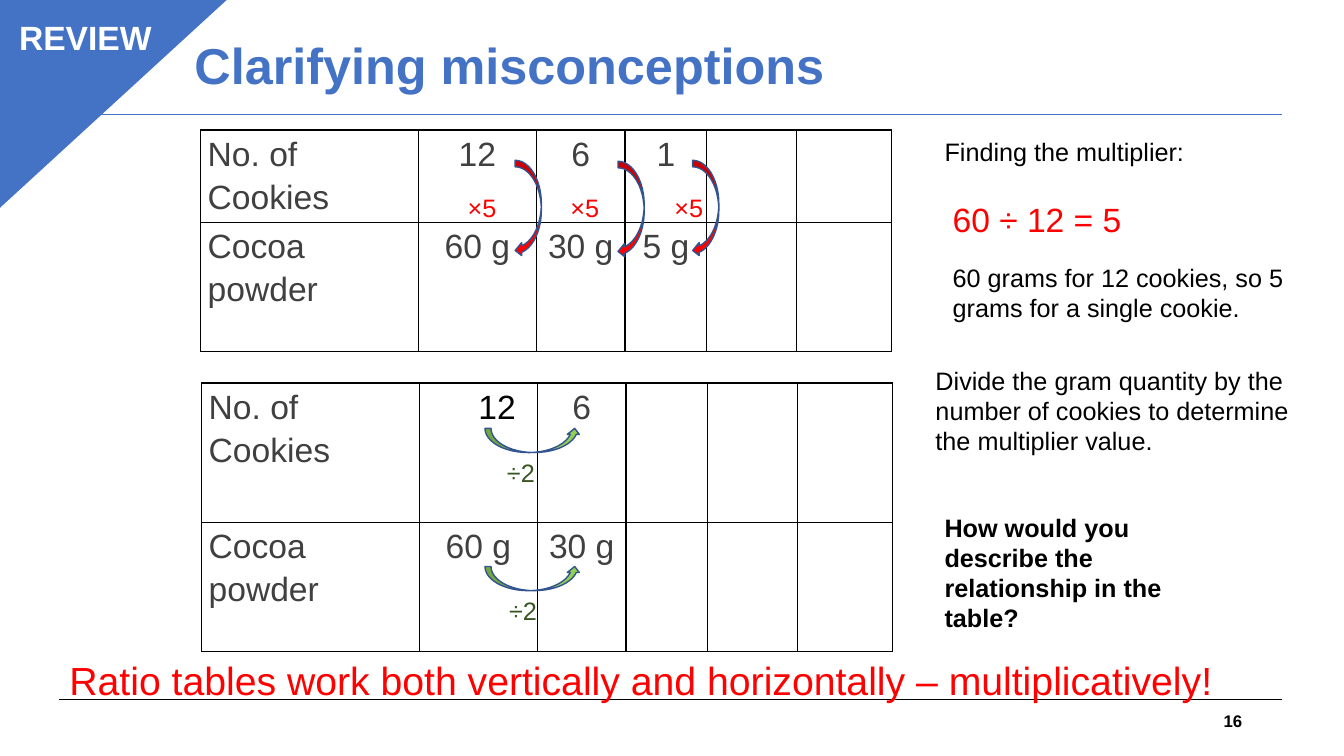
from dataclasses import dataclass

from lxml import etree
from pptx import Presentation
from pptx.dml.color import RGBColor
from pptx.enum.shapes import MSO_CONNECTOR, MSO_SHAPE
from pptx.enum.text import MSO_ANCHOR, PP_ALIGN
from pptx.oxml.ns import qn
from pptx.util import Pt

PX = 9144  # 100 px to the inch
FONT = "Arial"

BLACK = RGBColor(0x00, 0x00, 0x00)
WHITE = RGBColor(0xFF, 0xFF, 0xFF)
BLUE = RGBColor(0x44, 0x72, 0xC4)
NAVY = RGBColor(0x32, 0x54, 0x91)
RED = RGBColor(0xFF, 0x00, 0x00)
GREEN = RGBColor(0x92, 0xD0, 0x50)
DARK_GREEN = RGBColor(0x37, 0x56, 0x23)
GREY = RGBColor(0x40, 0x40, 0x40)

LEFT, CENTER, RIGHT = PP_ALIGN.LEFT, PP_ALIGN.CENTER, PP_ALIGN.RIGHT
TOP, MIDDLE = MSO_ANCHOR.TOP, MSO_ANCHOR.MIDDLE
STRAIGHT = MSO_CONNECTOR.STRAIGHT
TRIANGLE = MSO_SHAPE.ISOSCELES_TRIANGLE
DOWN_ARROW = MSO_SHAPE.CURVED_LEFT_ARROW
ACROSS_ARROW = MSO_SHAPE.CURVED_UP_ARROW


@dataclass
class Label:
    text: str
    x: int
    y: int
    w: int
    h: int
    size: int = 18
    color: RGBColor = BLACK
    bold: bool = False
    align: PP_ALIGN = LEFT
    anchor: MSO_ANCHOR = TOP
    spacing: float = 1.0


@dataclass
class RatioTable:
    x: int
    y: int
    row_heights: tuple
    rows: tuple


@dataclass
class Step:
    """A curved arrow with the factor it stands for."""
    arrow: MSO_SHAPE
    x: int
    y: int
    w: int
    h: int
    fill: RGBColor
    label: Label


COLUMNS = (216, 117, 88, 81, 89, 94)

TABLES = (
    RatioTable(199, 129, (91, 128), (
        ("No. of Cookies", "12", "6", "1", "", ""),
        ("Cocoa powder", "60 g", "30 g", "5 g", "", ""))),
    RatioTable(200, 380, (138, 128), (
        ("No. of Cookies", "12", "6", "", "", ""),
        ("Cocoa powder", "60 g", "30 g", "", "", ""))),
)

HEADINGS = (
    Label("REVIEW", 9, 12, 462, 50, 24, WHITE, True),
    Label("Clarifying misconceptions", 183, 12, 727, 111, 36, BLUE, True,
          anchor=MIDDLE, spacing=0.9),
    Label("16", 942, 695, 300, 40, 12, BLACK, True, RIGHT, MIDDLE),
)

NOTES = (
    Label("Ratio tables work both vertically and horizontally – multiplicatively!",
          59, 646, 1215, 57, 28, RED),
    Label("Finding the multiplier:", 927, 130, 292, 40),
    Label("60 ÷ 12 = 5", 935, 192, 278, 50, 24, RED),
    Label("60 grams for 12 cookies, so 5 grams for a single cookie.",
          935, 255, 385, 71),
    Label("Divide the gram quantity by the number of cookies to determine "
          "the multiplier value.", 918, 357, 395, 101),
    Label("How would you describe the\nrelationship in the table?",
          927, 503, 283, 131, bold=True),
)

STEPS = [
    Step(DOWN_ARROW, x, y, 26, 96, RED, Label("×5", label_x, 186, 57, 40, color=RED))
    for x, y, label_x in ((511, 159, 454), (613, 160, 556), (687, 159, 659))
] + [
    Step(ACROSS_ARROW, 481, y, 95, 24, GREEN,
         Label("÷2", label_x, y + 24, 62, 40, color=DARK_GREEN))
    for y, label_x in ((425, 493), (562, 495))
]


def add_label(s, label: Label) -> None:
    box = s.shapes.add_textbox(*(v * PX for v in (label.x, label.y, label.w, label.h)))
    tf = box.text_frame
    tf.word_wrap = True
    tf.vertical_anchor = label.anchor
    tf.text = label.text
    for p in tf.paragraphs:
        p.alignment = label.align
        p.line_spacing = label.spacing
        set_font(p, label.size, label.color, label.bold)


def set_font(p, size: int, color: RGBColor, bold: bool = False) -> None:
    p.font.name = FONT
    p.font.size = Pt(size)
    p.font.bold = bold
    p.font.color.rgb = color


def add_rule(s, y: int, color: RGBColor) -> None:
    line = s.shapes.add_connector(STRAIGHT, 59 * PX, y * PX, 1272 * PX, y * PX)
    line.line.color.rgb = color
    line.line.width = Pt(0.75)
    etree.SubElement(line.element.spPr, qn("a:effectLst"))


def add_figure(s, kind: MSO_SHAPE, x: int, y: int, w: int, h: int,
               fill: RGBColor, outline: RGBColor):
    sp = s.shapes.add_shape(kind, x * PX, y * PX, w * PX, h * PX)
    sp.shadow.inherit = False
    sp.fill.solid()
    sp.fill.fore_color.rgb = fill
    sp.line.color.rgb = outline
    sp.line.width = Pt(1)
    return sp


def add_borders(cell) -> None:
    tc_pr = cell._tc.get_or_add_tcPr()
    for side in ("lnL", "lnR", "lnT", "lnB"):
        ln = etree.SubElement(tc_pr, qn(f"a:{side}"), w=str(Pt(1)))
        fill = etree.SubElement(ln, qn("a:solidFill"))
        etree.SubElement(fill, qn("a:srgbClr"), val=str(BLACK))


def add_ratio_table(s, spec: RatioTable):
    frame = s.shapes.add_table(
        len(spec.rows), len(COLUMNS), spec.x * PX, spec.y * PX,
        sum(COLUMNS) * PX, sum(spec.row_heights) * PX)
    table = frame.table
    table.first_row = table.horz_banding = False
    for column, width in zip(table.columns, COLUMNS):
        column.width = width * PX
    for i, (height, texts) in enumerate(zip(spec.row_heights, spec.rows)):
        table.rows[i].height = height * PX
        for j, text in enumerate(texts):
            cell = table.cell(i, j)
            cell.margin_left = cell.margin_right = 7 * PX
            cell.margin_top = cell.margin_bottom = 0
            add_borders(cell)
            cell.fill.background()
            cell.text = text
            p = cell.text_frame.paragraphs[0]
            p.alignment = CENTER if j else LEFT
            p.line_spacing = 1.15
            p.space_after = Pt(4)
            set_font(p, 24, GREY)
    return table


def main() -> None:
    prs = Presentation()
    prs.slide_width, prs.slide_height = 1333 * PX, 750 * PX
    s = prs.slides.add_slide(prs.slide_layouts[6])

    # Rules and corner flag
    add_rule(s, 694, BLACK)
    add_rule(s, 114, BLUE)
    flag = add_figure(s, TRIANGLE, -3, -2, 229, 210, BLUE, BLUE)
    flag.adjustments[0] = 0
    flag.element.spPr.xfrm.set("flipV", "1")
    for label in HEADINGS:
        add_label(s, label)

    # Ratio tables; the second one has its black 12 set off to the right
    tables = [add_ratio_table(s, spec) for spec in TABLES]
    twelve = tables[1].cell(0, 1)
    twelve.margin_left = 44 * PX
    twelve.text_frame.paragraphs[0].font.color.rgb = BLACK

    # Explanations
    for label in NOTES:
        add_label(s, label)

    # Arrows between the quantities
    for step in STEPS:
        add_label(s, step.label)
        add_figure(s, step.arrow, step.x, step.y, step.w, step.h, step.fill, NAVY)

    prs.save("out.pptx")


if __name__ == "__main__":
    main()
